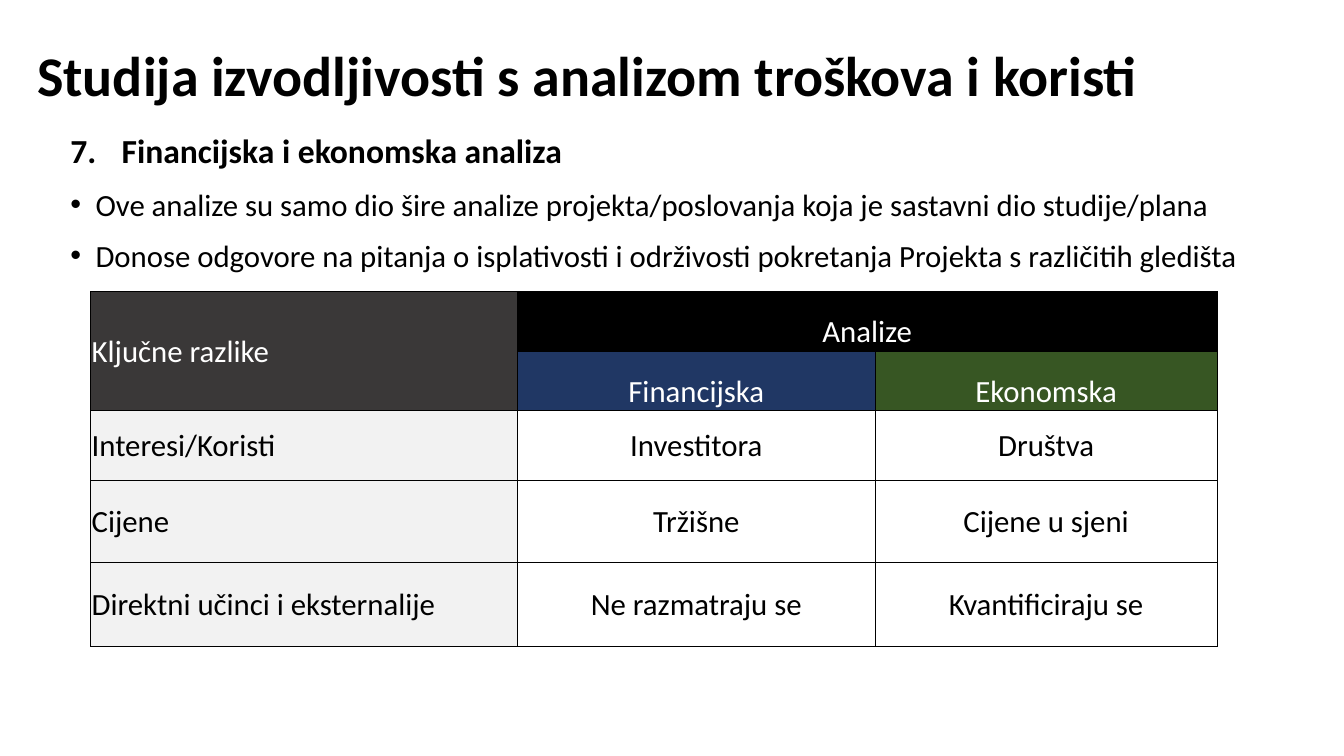
from dataclasses import dataclass

from lxml.etree import SubElement
from pptx import Presentation
from pptx.dml.color import RGBColor
from pptx.enum.text import MSO_ANCHOR, PP_ALIGN
from pptx.oxml import parse_xml
from pptx.oxml.ns import nsdecls, qn
from pptx.util import Inches, Pt


@dataclass(frozen=True)
class Theme:
    font: str = "Calibri"
    title_size: int = 40
    heading_size: int = 24
    text_size: int = 22
    border_width: float = 0.5
    ink: str = "000000"
    paper: str = "FFFFFF"
    corner: str = "3A3838"
    financial: str = "203764"
    economic: str = "375623"
    label: str = "F2F2F2"


class SlideBuilder:
    """Places elements on a grid of 160 columns and 90 rows."""

    def __init__(self, presentation, theme):
        self.theme = theme
        self.column = presentation.slide_width / 160
        self.row = presentation.slide_height / 90
        self.slide = presentation.slides.add_slide(presentation.slide_layouts[6])

    def box(self, left, top, width, height):
        return (round(left * self.column), round(top * self.row),
                round(width * self.column), round(height * self.row))

    def style(self, paragraph, size, color, bold=False):
        for run in paragraph.runs:
            run.font.name = self.theme.font
            run.font.size = Pt(size)
            run.font.bold = bold
            run.font.color.rgb = RGBColor.from_string(color)

    def text(self, lines, place, anchor=MSO_ANCHOR.TOP):
        frame = self.slide.shapes.add_textbox(*self.box(*place)).text_frame
        frame.word_wrap = True
        frame.vertical_anchor = anchor
        frame.text = "\n".join(line["text"] for line in lines)
        for paragraph, line in zip(frame.paragraphs, lines):
            paragraph.line_spacing = line.get("spacing", 1.0)
            paragraph.space_before = Pt(line.get("before", 0))
            if "marker" in line:
                self.marker(paragraph, line["indent"], *line["marker"])
            self.style(paragraph, line["size"], self.theme.ink, line.get("bold", False))

    def marker(self, paragraph, indent, tag, attributes):
        properties = paragraph._p.get_or_add_pPr()
        hanging = round(indent * self.column)
        properties.set("marL", str(hanging))
        properties.set("indent", str(-hanging))
        SubElement(properties, qn("a:buFont"), typeface="Arial" if tag == "a:buChar" else "+mj-lt")
        SubElement(properties, qn(tag), **attributes)

    def borders(self, cell):
        properties = cell._tc.get_or_add_tcPr()
        width = Pt(self.theme.border_width)
        for position, side in enumerate("LRTB"):
            properties.insert(position, parse_xml(
                f'<a:ln{side} {nsdecls("a")} w="{width}"><a:solidFill>'
                f'<a:srgbClr val="{self.theme.ink}"/></a:solidFill></a:ln{side}>'))

    def cell(self, cell, text, fill, color, anchor, align):
        cell.fill.solid()
        cell.fill.fore_color.rgb = RGBColor.from_string(fill)
        cell.margin_left = cell.margin_right = cell.margin_top = Inches(0.01)
        cell.margin_bottom = 0
        cell.vertical_anchor = anchor
        cell.text_frame.text = text
        paragraph = cell.text_frame.paragraphs[0]
        paragraph.alignment = align
        self.style(paragraph, self.theme.text_size, color)
        self.borders(cell)

    def table(self, left, top, widths, heights, content, fills, merges, header_rows):
        place = self.box(left, top, sum(widths), sum(heights))
        table = self.slide.shapes.add_table(len(heights), len(widths), *place).table
        table.first_row = table.horz_banding = False
        for column, width in zip(table.columns, widths):
            column.width = round(width * self.column)
        for row, height in zip(table.rows, heights):
            row.height = round(height * self.row)
        for r, texts in enumerate(content):
            for c, text in enumerate(texts):
                header = r < header_rows
                self.cell(table.cell(r, c), text, fills[r][c],
                          self.theme.paper if header else self.theme.ink,
                          MSO_ANCHOR.BOTTOM if header and c else MSO_ANCHOR.MIDDLE,
                          PP_ALIGN.CENTER if c else PP_ALIGN.LEFT)
        for first, last in merges:
            table.cell(*first).merge(table.cell(*last))


def main():
    presentation = Presentation()
    presentation.slide_width, presentation.slide_height = Inches(13.33), Inches(7.5)
    theme = Theme()
    builder = SlideBuilder(presentation, theme)

    # Title
    title = {"text": "Studija izvodljivosti s analizom troškova i koristi",
             "size": theme.title_size, "bold": True, "spacing": 0.9}
    builder.text([title], (3.24, 0.6, 138, 17.4), MSO_ANCHOR.MIDDLE)

    # Numbered heading and bullets
    heading = {"text": "Financijska i ekonomska analiza", "size": theme.heading_size,
               "bold": True, "spacing": 0.95, "indent": 6.1,
               "marker": ("a:buAutoNum", {"type": "arabicPeriod", "startAt": "7"})}
    statements = [
        "Ove analize su samo dio šire analize projekta/poslovanja koja je sastavni dio studije/plana",
        "Donose odgovore na pitanja o isplativosti i održivosti pokretanja Projekta s različitih gledišta",
    ]
    bullets = [{"text": statement, "size": theme.text_size, "before": 10, "indent": 3,
                "marker": ("a:buChar", {"char": "•"})} for statement in statements]
    builder.text([heading, *bullets], (7.2, 15.24, 145, 61.7))

    # Comparison of the two analyses
    differences = [
        ["Ključne razlike", "Analize", ""],
        ["", "Financijska", "Ekonomska"],
        ["Interesi/Koristi", "Investitora", "Društva"],
        ["Cijene", "Tržišne", "Cijene u sjeni"],
        ["Direktni učinci i eksternalije", "Ne razmatraju se", "Kvantificiraju se"],
    ]
    fills = [[theme.corner, theme.ink, theme.ink],
             [theme.corner, theme.financial, theme.economic],
             *[[theme.label, theme.paper, theme.paper]] * 3]
    builder.table(10.8, 34.7, [50.8, 42.6, 40.7], [7.1, 7.1, 8.3, 9.8, 10],
                  differences, fills, [((0, 0), (1, 0)), ((0, 1), (0, 2))], header_rows=2)

    presentation.save("out.pptx")


if __name__ == "__main__":
    main()
